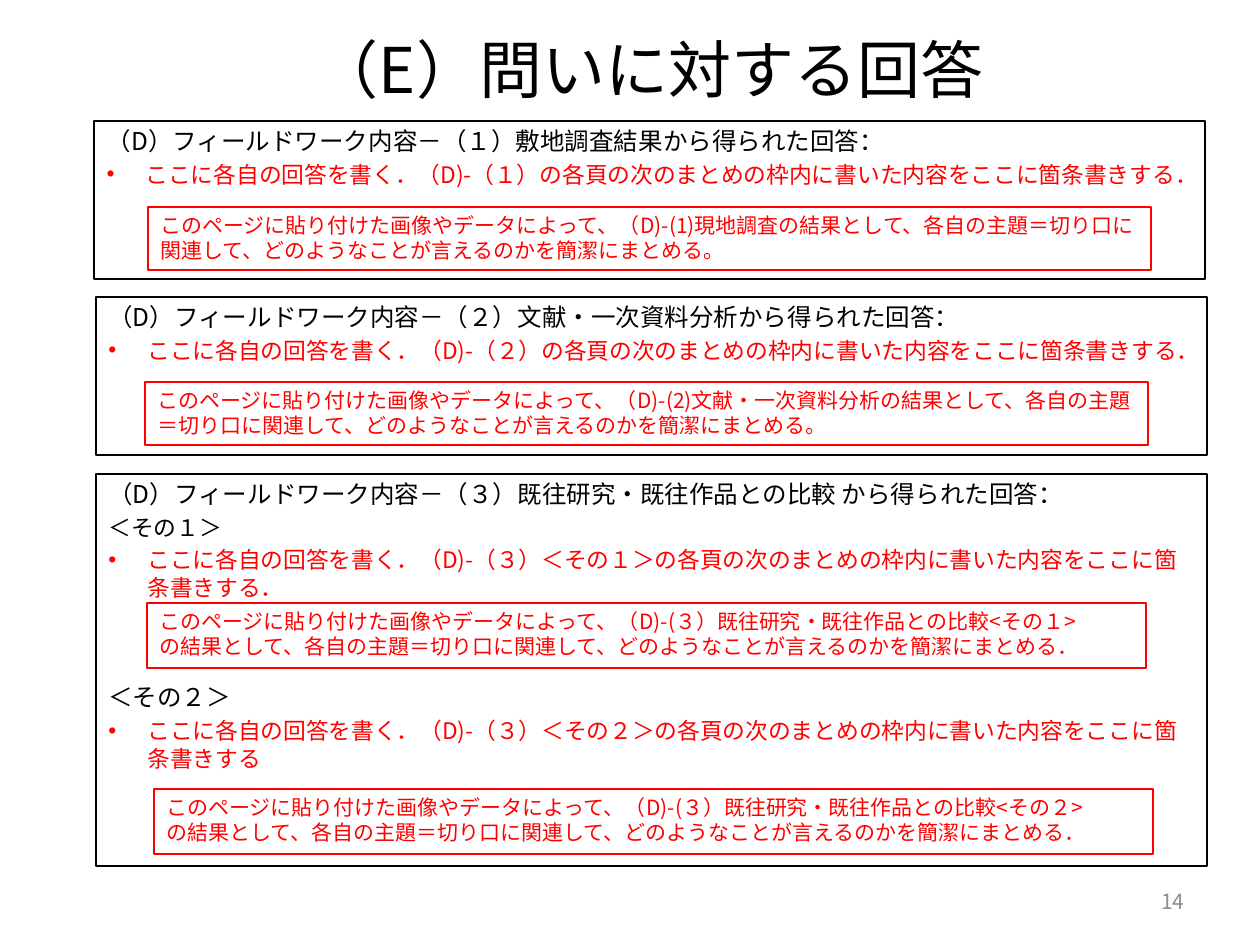
from dataclasses import dataclass
from lxml.etree import SubElement
from pptx import Presentation
from pptx.dml.color import RGBColor
from pptx.enum.shapes import MSO_SHAPE
from pptx.enum.text import MSO_ANCHOR, MSO_AUTO_SIZE, PP_ALIGN
from pptx.oxml.ns import qn
from pptx.util import Emu, Pt


@dataclass(frozen=True)
class Theme:
    font: str = "Noto Sans CJK JP"
    black: RGBColor = RGBColor(0, 0, 0)
    red: RGBColor = RGBColor(255, 0, 0)
    grey: RGBColor = RGBColor(0x8C, 0x8C, 0x8C)
    title: int = 36
    heading: int = 14
    body: int = 13
    note: int = 12


theme = Theme()
SCALE = 914400 / 126
INDENT = round(39 * SCALE)


def place(box, bounds, line_color=None):
    box.left, box.top, box.width, box.height = [Emu(round(n * SCALE)) for n in bounds]
    box.text_frame.word_wrap = True
    box.text_frame.auto_size = MSO_AUTO_SIZE.NONE
    box.text_frame.vertical_anchor = MSO_ANCHOR.TOP if line_color else MSO_ANCHOR.MIDDLE
    if line_color is not None:
        box.fill.background()
        box.line.color.rgb = line_color
        box.line.width = Pt(0.75)


def style(para, size, color, align=PP_ALIGN.LEFT, pitch=None, before=0):
    para.alignment = align
    para.space_before = Pt(before)
    if pitch:
        para.line_spacing = Pt(pitch)
    for span in para.runs:
        span.font.size = Pt(size)
        span.font.color.rgb = color
        span.font.name = theme.font
        SubElement(span.font._element, qn("a:ea"), typeface=theme.font)


answer = "ここに各自の回答を書く．（D)-（{}の各頁の次のまとめの枠内に書いた内容をここに箇条書きする{}"
evidence = "このページに貼り付けた画像やデータによって、（D)-({}"
summary = "の結果として、各自の主題＝切り口に関連して、どのようなことが言えるのかを簡潔にまとめる．"
single_summary = "の結果として、各自の主題＝切り口に関連して、どのようなことが言えるのかを簡潔にまとめる。"
comparison = "３）既往研究・既往作品との比較<その{}>"

sections = [
    ((94, 121, 1111, 158), "（１）敷地調査結果",
     [("bullet", answer.format("１）", "．"))],
     [((148, 207, 1003, 63), [evidence.format("1)現地調査") + single_summary])]),
    ((96, 297, 1111, 158), "（２）文献・一次資料分析",
     [("bullet", answer.format("２）", "．"))],
     [((145, 382, 1003, 63), [evidence.format("2)文献・一次資料分析") + single_summary])]),
    ((96, 474, 1111, 392), "（３）既往研究・既往作品との比較 ",
     [("label", "＜その１＞"), ("bullet", answer.format("３）＜その１＞", "．")),
      ("second label", "＜その２＞"), ("bullet", answer.format("３）＜その２＞", ""))],
     [((147, 603, 999, 65), [evidence.format(comparison.format("１")), summary]),
      ((154, 789, 999, 65), [evidence.format(comparison.format("２")), summary])]),
]
label_styles = {"label": (theme.body, 2.8), "second label": (theme.heading, 47)}

deck = Presentation()
deck.slide_width = Emu(round(1260 * SCALE))
deck.slide_height = Emu(round(945 * SCALE))
page = deck.slides.add_slide(deck.slide_layouts[0])

title = page.shapes.title
place(title, (94, 24, 1111, 89))
title.text_frame.text = "（E）問いに対する回答"
style(title.text_frame.paragraphs[0], theme.title, theme.black, PP_ALIGN.CENTER)

number = page.shapes.add_textbox(0, 0, 0, 0)
place(number, (903, 876, 294, 50))
number.text_frame.text = "14"
style(number.text_frame.paragraphs[0], theme.note, theme.grey, PP_ALIGN.RIGHT)

for index, (bounds, topic, entries, notes) in enumerate(sections):
    if index == 0:
        box = page.placeholders[1]
    else:
        box = page.shapes.add_shape(MSO_SHAPE.RECTANGLE, 0, 0, 0, 0)
        box.shadow.inherit = False
    place(box, bounds, theme.black)
    box.text_frame.text = f"（D）フィールドワーク内容－{topic}から得られた回答："
    style(box.text_frame.paragraphs[0], theme.heading, theme.black, pitch=16, before=2.8)
    for kind, text in entries:
        para = box.text_frame.add_paragraph()
        para.text = text
        if kind == "bullet":
            style(para, theme.body, theme.red, pitch=16, before=2.6)
            properties = para._p.get_or_add_pPr()
            properties.set("marL", str(INDENT))
            properties.set("indent", str(-INDENT))
            SubElement(properties, qn("a:buFont"), typeface="Arial")
            SubElement(properties, qn("a:buChar"), char="•")
        else:
            size, before = label_styles[kind]
            style(para, size, theme.black, pitch=16, before=before)
    for note_bounds, lines in notes:
        note = page.shapes.add_shape(MSO_SHAPE.RECTANGLE, 0, 0, 0, 0)
        note.shadow.inherit = False
        place(note, note_bounds, theme.red)
        note.text_frame.text = "\n".join(lines)
        for para in note.text_frame.paragraphs:
            style(para, theme.note, theme.red, pitch=14.3)

deck.save("out.pptx")
